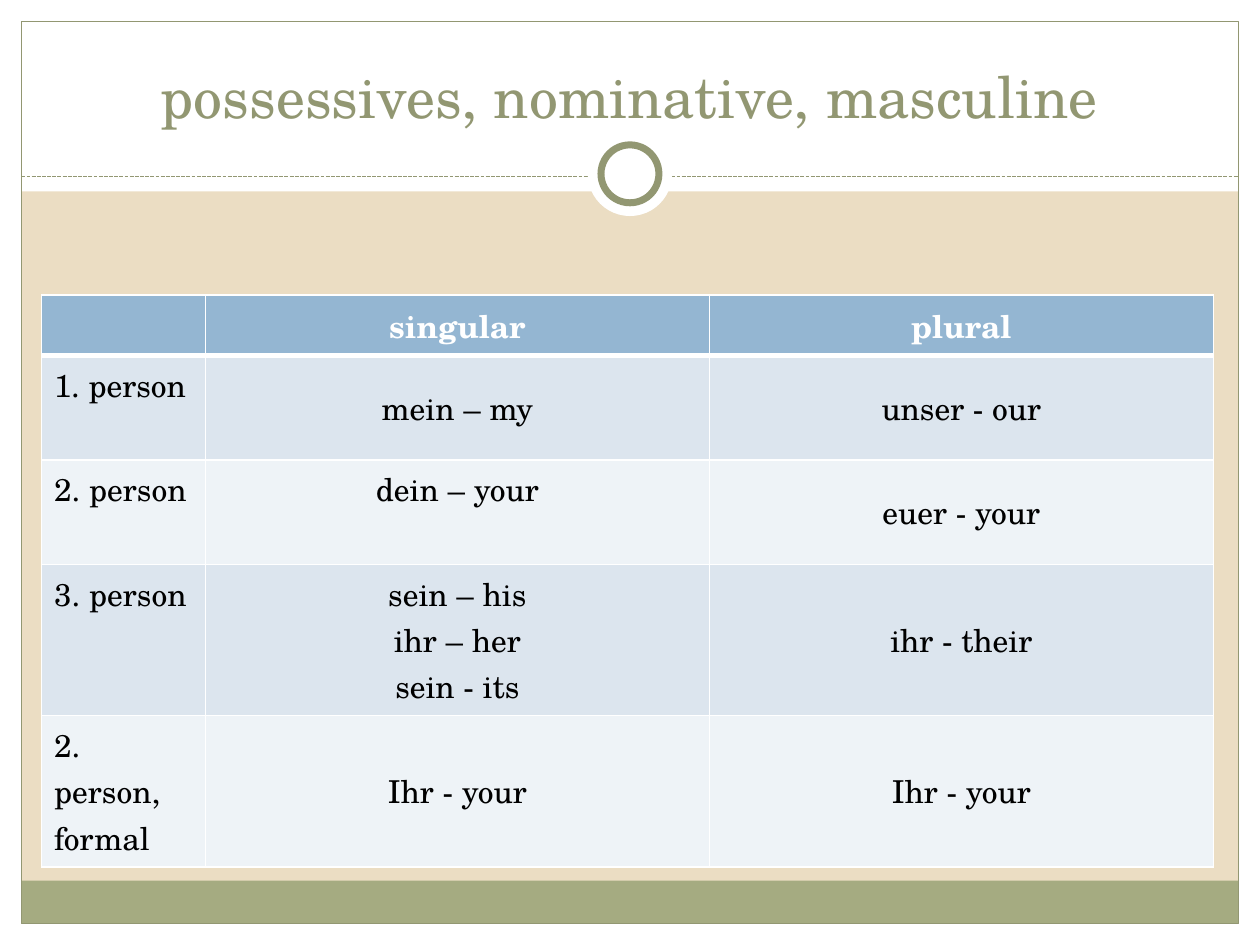
"""Build a slide with a table of German possessives."""
from pptx import Presentation
from pptx import util as u
from pptx.dml import color
from pptx.enum import dml, shapes, text
from pptx.oxml import parse_xml
from pptx.oxml import ns

FONT = "TeX Gyre Schola"
WIDTH, HEIGHT = 10, 7.5
MARGIN = 0.17
WHITE, OLIVE, GREEN, SAND = "FFFFFF", "929772", "A5AB81", "EBDDC3"
HEADER_FILL, BAND_FILLS = "94B6D2", ("DCE5EE", "EEF3F7")
COLUMNS = (1.3, 4, 4)
ROWS = (0.48, 0.83, 0.83, 1.2, 1.2)
CONTENT = (
    ("", "singular", "plural"),
    ("1. person", "mein – my", "unser - our"),
    ("2. person", "dein – your", "euer - your"),
    ("3. person", "sein – his\nihr – her\nsein - its", "ihr - their"),
    ("2. person, formal", "Ihr - your", "Ihr - your"),
)
TOP_CELLS = {(2, 1)}


def rgb(code):
    """Turn a hex string into a colour."""
    return color.RGBColor.from_string(code)


def paint(target, code):
    """Give a shape, cell or background a solid fill."""
    target.fill.solid()
    target.fill.fore_color.rgb = rgb(code)


def add_figure(page, kind, left, top, width, height, fill=None, line=None, weight=0.75):
    """Add a preset shape with an optional fill and outline."""
    figure = page.shapes.add_shape(kind, *map(u.Inches, (left, top, width, height)))
    figure.shadow.inherit = False
    if fill:
        paint(figure, fill)
    else:
        figure.fill.background()
    if line:
        figure.line.color.rgb = rgb(line)
        figure.line.width = u.Pt(weight)
    else:
        figure.line.fill.background()


def add_ring(page, center, middle, size, **style):
    """Add a circle around a center point."""
    add_figure(page, shapes.MSO_SHAPE.OVAL, center - size / 2, middle - size / 2, size, size, **style)


def add_rule(page, level):
    """Add the dashed line across the frame."""
    rule = page.shapes.add_connector(
        shapes.MSO_CONNECTOR.STRAIGHT, *map(u.Inches, (MARGIN, level, WIDTH - MARGIN, level)))
    rule.line.color.rgb = rgb(OLIVE)
    rule.line.width = u.Pt(0.75)
    rule.line.dash_style = dml.MSO_LINE.SQUARE_DOT
    rule._element.spPr.append(parse_xml(f"<a:effectLst {ns.nsdecls('a')}/>"))


def write(frame, content, size=18, code="000000", bold=False, centered=True):
    """Write each line of the content as a paragraph."""
    frame.word_wrap = True
    for index, line in enumerate(content.split("\n")):
        para = frame.add_paragraph() if index else frame.paragraphs[0]
        para.alignment = text.PP_ALIGN.CENTER if centered else text.PP_ALIGN.LEFT
        span = para.add_run()
        span.text = line
        span.font.name = FONT
        span.font.size = u.Pt(size)
        span.font.bold = bold
        span.font.color.rgb = rgb(code)


def add_title(page, content):
    """Add the title, resting on the bottom of its box."""
    box = page.shapes.add_textbox(*map(u.Inches, (0.33, 0.25, 9.33, 0.83)))
    box.text_frame.vertical_anchor = text.MSO_ANCHOR.BOTTOM
    write(box.text_frame, content, size=33, code=OLIVE)


def set_borders(cell, **weights):
    """Draw white borders on the sides L, R, T and B."""
    properties = cell._tc.get_or_add_tcPr()
    for side, weight in weights.items():
        properties.append(parse_xml(
            f'<a:ln{side} {ns.nsdecls("a")} w="{u.Pt(weight)}"><a:solidFill>'
            f'<a:srgbClr val="{WHITE}"/></a:solidFill></a:ln{side}>'))


def add_grid(page, left, top):
    """Add the table of possessives."""
    size = (left, top, sum(COLUMNS), sum(ROWS))
    table = page.shapes.add_table(len(ROWS), len(COLUMNS), *map(u.Inches, size)).table
    for column, width in zip(table.columns, COLUMNS):
        column.width = u.Inches(width)
    for row, (height, entries) in enumerate(zip(ROWS, CONTENT)):
        table.rows[row].height = u.Inches(height)
        header = row == 0
        for column, entry in enumerate(entries):
            cell = table.cell(row, column)
            set_borders(cell, L=1, R=1, T=3 if row == 1 else 1, B=3 if header else 1)
            paint(cell, HEADER_FILL if header else BAND_FILLS[(row - 1) % 2])
            at_top = column == 0 or (row, column) in TOP_CELLS
            cell.vertical_anchor = text.MSO_ANCHOR.TOP if at_top else text.MSO_ANCHOR.MIDDLE
            write(cell.text_frame, entry, code=WHITE if header else "000000",
                  bold=header, centered=column > 0)


def add_frame(page):
    """Add the white margins, the green band, the outline and the ring."""
    block = shapes.MSO_SHAPE.RECTANGLE
    inner = WIDTH - 2 * MARGIN
    for area in ((0, HEIGHT - MARGIN, WIDTH, MARGIN), (0, 0, WIDTH, 1.52),
                 (0, 0, MARGIN, HEIGHT), (WIDTH - MARGIN, 0, MARGIN, HEIGHT)):
        add_figure(page, block, *area, fill=WHITE)
    add_figure(page, block, MARGIN, 6.99, inner, 0.34, fill=GREEN)
    add_figure(page, block, MARGIN, MARGIN, inner, HEIGHT - 2 * MARGIN, line=OLIVE)
    add_rule(page, 1.4)
    add_ring(page, WIDTH / 2, 1.38, 0.67, fill=WHITE)
    add_ring(page, WIDTH / 2, 1.38, 0.46, fill=WHITE, line=OLIVE, weight=4)


def main():
    """Build and save the deck."""
    deck = Presentation()
    deck.slide_width, deck.slide_height = u.Inches(WIDTH), u.Inches(HEIGHT)
    page = deck.slides.add_slide(deck.slide_layouts[6])
    paint(page.background, SAND)
    add_frame(page)
    add_title(page, "possessives, nominative, masculine")
    add_grid(page, 0.33, 2.34)
    deck.save("out.pptx")


if __name__ == "__main__":
    main()
